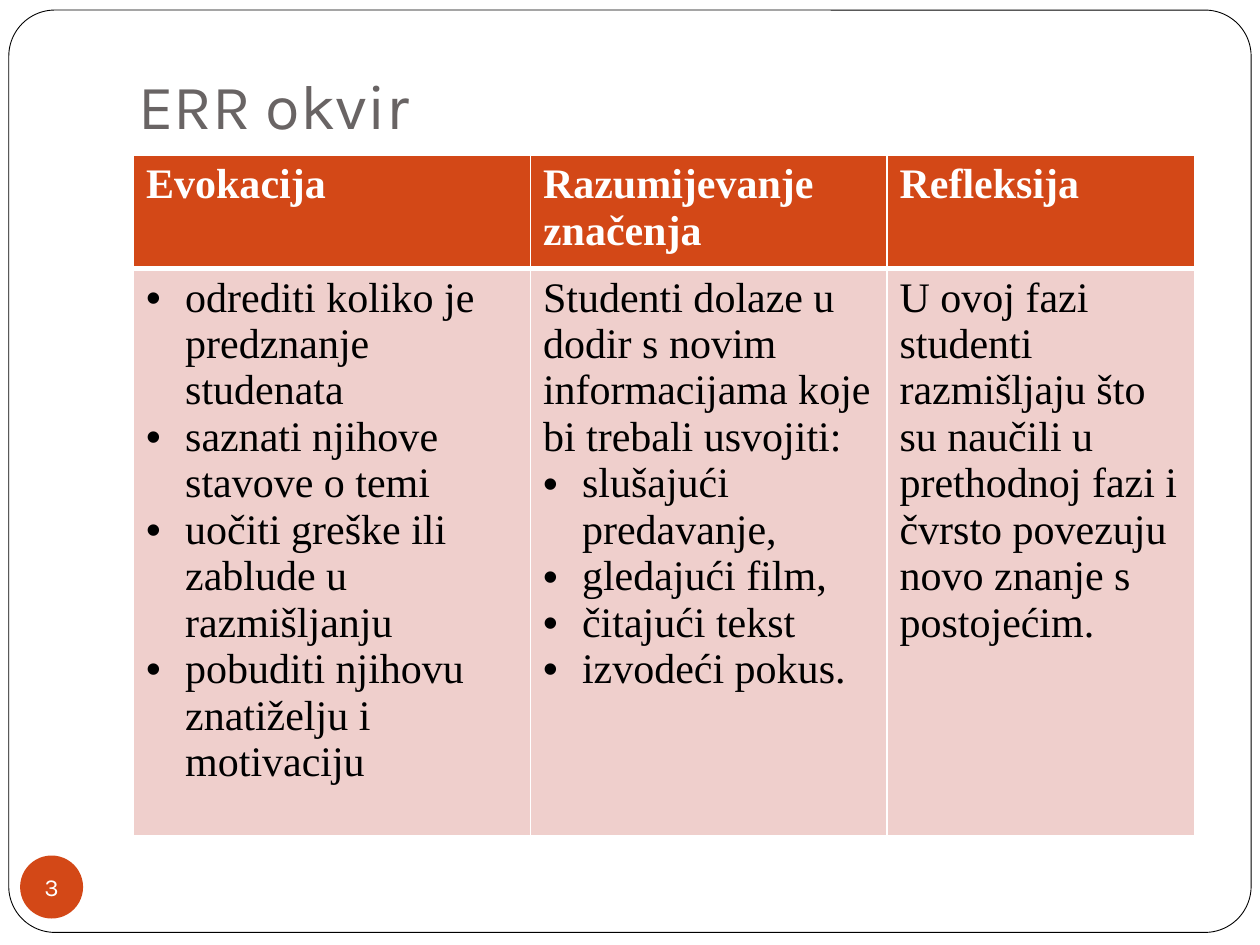
import pptx
import pptx.util
import pptx.dml.color
import pptx.enum.shapes
import pptx.enum.text
import pptx.oxml.ns
import lxml.etree

Inches = pptx.util.Inches
Pt = pptx.util.Pt
qn = pptx.oxml.ns.qn
ANCHOR = pptx.enum.text.MSO_ANCHOR
ALIGN = pptx.enum.text.PP_ALIGN
SHAPE = pptx.enum.shapes.MSO_SHAPE

BULLET = "•"
PHASES = {
    "Evokacija": [
        (BULLET, "odrediti koliko je predznanje studenata"),
        (BULLET, "saznati njihove stavove o temi"),
        (BULLET, "uočiti greške ili zablude u razmišljanju"),
        (BULLET, "pobuditi njihovu znatiželju i motivaciju"),
    ],
    "Razumijevanje značenja": [
        ("", "Studenti dolaze u dodir s novim informacijama koje bi trebali usvojiti:"),
        (BULLET, "slušajući predavanje,"),
        (BULLET, "gledajući film,"),
        (BULLET, "čitajući tekst"),
        (BULLET, "izvodeći pokus."),
    ],
    "Refleksija": [
        ("", "U ovoj fazi studenti razmišljaju što su naučili u prethodnoj fazi "
             "i čvrsto povezuju novo znanje s postojećim."),
    ],
}


def color(hex_code):
    return pptx.dml.color.RGBColor.from_string(hex_code)


class SlideBuilder:
    heading_font, body_font = "Karla", "Times New Roman"
    accent, tint = "D34817", "EFCFCC"
    white, black, gray = "FFFFFF", "000000", "696464"

    def __init__(self, slide):
        self.slide = slide

    def style(self, paragraph, size, hex_code, font, bold=False):
        for run in paragraph.runs:
            run.font.size = Pt(size)
            run.font.name = font
            run.font.bold = bold
            run.font.color.rgb = color(hex_code)

    def shape(self, kind, left, top, width, height, fill, line=None):
        shape = self.slide.shapes.add_shape(
            kind, Inches(left), Inches(top), Inches(width), Inches(height))
        shape.shadow.inherit = False
        shape.fill.solid()
        shape.fill.fore_color.rgb = color(fill)
        if line:
            shape.line.color.rgb = color(line)
            shape.line.width = Pt(0.5)
        else:
            shape.line.fill.background()
        return shape

    def frame(self):
        frame = self.shape(SHAPE.ROUNDED_RECTANGLE, 0.07, 0.08, 9.86, 7.32,
                           self.white, self.black)
        frame.adjustments[0] = 0.05

    def title(self, text):
        title = self.slide.shapes.add_textbox(
            Inches(1), Inches(0.3), Inches(8.5), Inches(0.93)).text_frame
        title.word_wrap = True
        title.vertical_anchor = ANCHOR.BOTTOM
        title.margin_bottom = Inches(0.1)
        title.text = text
        self.style(title.paragraphs[0], 36, self.gray, self.heading_font)

    def page_number(self, number):
        badge = self.shape(SHAPE.OVAL, 0.16, 6.79, 0.5, 0.5, self.accent).text_frame
        badge.margin_left = badge.margin_right = 0
        badge.margin_top = badge.margin_bottom = 0
        badge.word_wrap = False
        badge.vertical_anchor = ANCHOR.MIDDLE
        badge.text = number
        badge.paragraphs[0].alignment = ALIGN.CENTER
        self.style(badge.paragraphs[0], 14, self.white, self.heading_font)

    def bullet(self, paragraph, mark):
        properties = paragraph._p.get_or_add_pPr()
        properties.set("marL", str(Inches(0.31)))
        properties.set("indent", str(-Inches(0.31)))
        lxml.etree.SubElement(properties, qn("a:buFont")).set("typeface", "Arial")
        lxml.etree.SubElement(properties, qn("a:buChar")).set("char", mark)

    def borders(self, cell, **widths):
        properties = cell._tc.get_or_add_tcPr()
        for position, side in enumerate("LRTB"):
            line = lxml.etree.Element(qn("a:ln" + side), w=str(Pt(widths.get(side, 1))))
            fill = lxml.etree.SubElement(line, qn("a:solidFill"))
            lxml.etree.SubElement(fill, qn("a:srgbClr")).set("val", self.white)
            properties.insert(position, line)

    def cell(self, cell, entries, fill, text_color, bold=False, **border_widths):
        cell.fill.solid()
        cell.fill.fore_color.rgb = color(fill)
        self.borders(cell, **border_widths)
        cell.text_frame.text = "\n".join(text for _, text in entries)
        for paragraph, (mark, _) in zip(cell.text_frame.paragraphs, entries):
            self.style(paragraph, 24, text_color, self.body_font, bold)
            if mark:
                self.bullet(paragraph, mark)

    def phase_table(self, phases, widths, heights):
        table = self.slide.shapes.add_table(
            len(heights), len(widths), Inches(1.06), Inches(1.23),
            Inches(sum(widths)), Inches(sum(heights))).table
        for row, height in zip(table.rows, heights):
            row.height = Inches(height)
        for index, (phase, entries) in enumerate(phases.items()):
            table.columns[index].width = Inches(widths[index])
            self.cell(table.cell(0, index), [("", phase)],
                      self.accent, self.white, bold=True, B=3)
            self.cell(table.cell(1, index), entries, self.tint, self.black, T=3)


def main():
    deck = pptx.Presentation()
    deck.slide_width, deck.slide_height = Inches(10), Inches(7.5)
    builder = SlideBuilder(deck.slides.add_slide(deck.slide_layouts[6]))

    # Background frame and heading
    builder.frame()
    builder.title("ERR okvir")

    # Page number badge
    builder.page_number("3")

    # The three phases of the framework
    builder.phase_table(PHASES, widths=[3.15, 2.83, 2.44], heights=[0.83, 4.15])

    deck.save("out.pptx")


if __name__ == "__main__":
    main()
